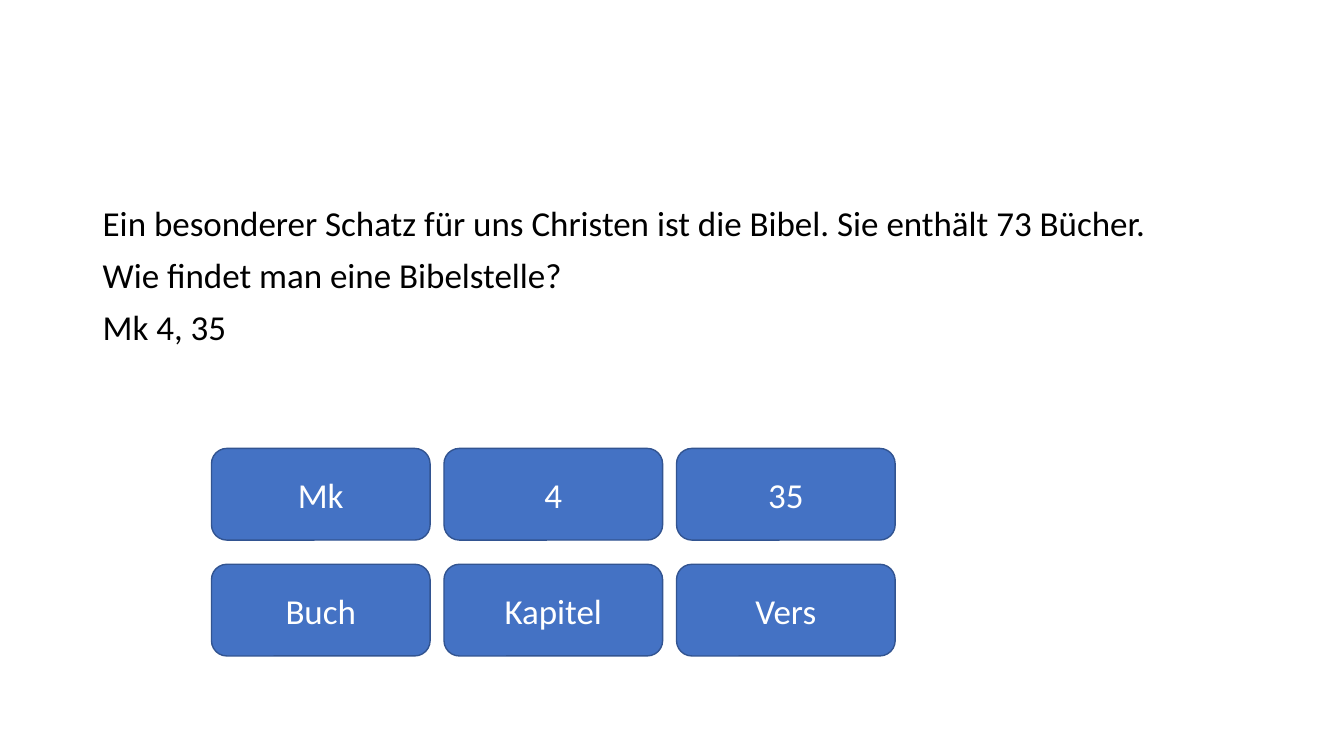
from dataclasses import dataclass

from pptx import Presentation
from pptx.dml.color import RGBColor
from pptx.enum.shapes import MSO_SHAPE as Preset
from pptx.enum.text import MSO_ANCHOR as Anchor, PP_ALIGN as Align
from pptx.slide import Slide
from pptx.util import Cm, Pt

BLACK = RGBColor(0x00, 0x00, 0x00)
WHITE = RGBColor(0xFF, 0xFF, 0xFF)
TILE_BLUE = RGBColor(0x44, 0x72, 0xC4)
EDGE_BLUE = RGBColor(0x32, 0x54, 0x91)
FONT = "Calibri"
TEXT_SIZE = Pt(25)

TILE_LEFT, TILE_TOP = 5.33, 11.3
TILE_WIDTH, TILE_HEIGHT = 5.51, 2.31
COLUMN_STEP, ROW_STEP = 5.86, 2.92

INTRO = [
    "Ein besonderer Schatz für uns Christen ist die Bibel. Sie enthält 73 Bücher.",
    "Wie findet man eine Bibelstelle?",
    "Mk 4, 35",
]
REFERENCE_ROWS = [["Mk", "4", "35"], ["Buch", "Kapitel", "Vers"]]


@dataclass
class Tile:
    label: str
    column: int
    row: int


def style_font(para, color: RGBColor) -> None:
    para.font.name = FONT
    para.font.size = TEXT_SIZE
    para.font.color.rgb = color


def add_intro(page: Slide) -> None:
    box = page.shapes.add_textbox(Cm(2.34), Cm(5.08), Cm(29.21), Cm(12.09))
    frame = box.text_frame
    frame.word_wrap = True
    frame.text = "\n".join(INTRO)
    for para in frame.paragraphs:
        para.line_spacing = 0.9
        para.space_before = Pt(10)
        style_font(para, BLACK)


def add_tile(page: Slide, tile: Tile) -> None:
    shape = page.shapes.add_shape(
        Preset.ROUNDED_RECTANGLE,
        Cm(TILE_LEFT + tile.column * COLUMN_STEP),
        Cm(TILE_TOP + tile.row * ROW_STEP),
        Cm(TILE_WIDTH),
        Cm(TILE_HEIGHT),
    )
    shape.shadow.inherit = False
    shape.fill.solid()
    shape.fill.fore_color.rgb = TILE_BLUE
    shape.line.color.rgb = EDGE_BLUE
    shape.line.width = Pt(1)
    frame = shape.text_frame
    frame.vertical_anchor = Anchor.MIDDLE
    frame.text = tile.label
    para = frame.paragraphs[0]
    para.alignment = Align.CENTER
    style_font(para, WHITE)


def main() -> None:
    deck = Presentation()
    deck.slide_width, deck.slide_height = Cm(33.87), Cm(19.05)
    page = deck.slides.add_slide(deck.slide_layouts.get_by_name("Blank"))
    add_intro(page)
    for row, labels in enumerate(REFERENCE_ROWS):
        for column, label in enumerate(labels):
            add_tile(page, Tile(label, column, row))
    deck.save("out.pptx")


if __name__ == "__main__":
    main()
